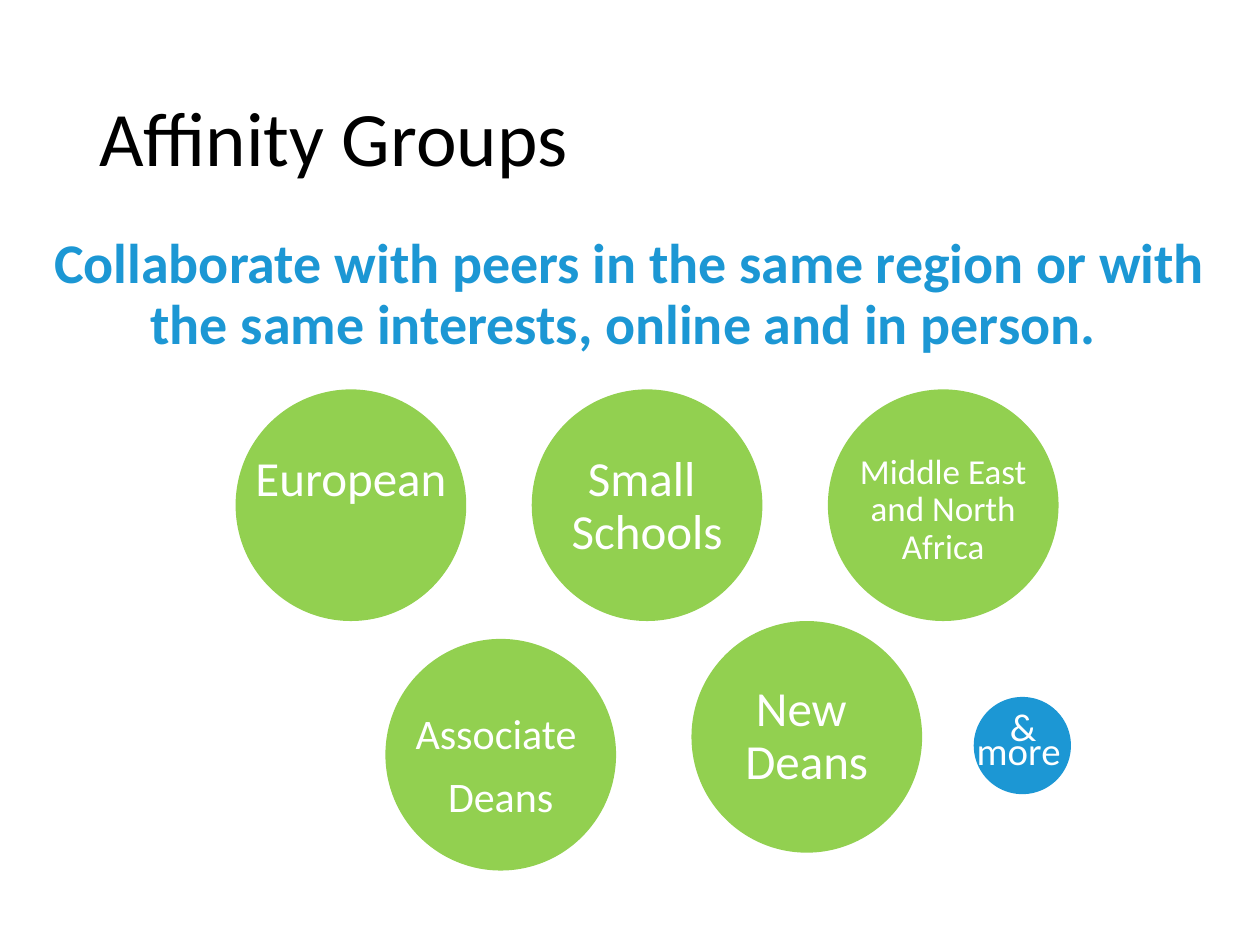
import pptx
import pptx.dml.color
import pptx.enum.shapes
import pptx.enum.text
import pptx.util

Cm = pptx.util.Cm
Pt = pptx.util.Pt
RGBColor = pptx.dml.color.RGBColor
Anchor = pptx.enum.text.MSO_ANCHOR
Align = pptx.enum.text.PP_ALIGN

BLACK = RGBColor(0x00, 0x00, 0x00)
WHITE = RGBColor(0xFF, 0xFF, 0xFF)
BLUE = RGBColor(0x1C, 0x97, 0xD4)
GREEN = RGBColor(0x92, 0xD0, 0x50)

GROUP_WIDTH, GROUP_HEIGHT = 4.65, 4.67
LABEL_HEIGHT = 4.06
ROW_LEFT, ROW_TOP, ROW_PITCH = 4.75, 7.85, 5.97


class SlideBuilder:
    font_name = "Calibri"

    def __init__(self, slide):
        self.slide = slide

    def add_text(self, left, top, width, height, paragraphs, size, color,
                 bold=False, align=Align.CENTER, anchor=Anchor.TOP,
                 line_spacing=0.9, margin=0.13):
        box = self.slide.shapes.add_textbox(Cm(left), Cm(top), Cm(width), Cm(height))
        text_frame = box.text_frame
        text_frame.word_wrap = True
        text_frame.vertical_anchor = anchor
        text_frame.margin_top = text_frame.margin_bottom = Cm(margin)
        text_frame.text = "\n".join(paragraphs)
        for index, paragraph in enumerate(text_frame.paragraphs):
            paragraph.alignment = align
            paragraph.line_spacing = line_spacing
            if index:
                paragraph.space_before = Pt(10)
            for run in paragraph.runs:
                run.font.name = self.font_name
                run.font.size = Pt(size)
                run.font.bold = bold
                run.font.color.rgb = color

    def add_circle(self, left, top, width, height, color):
        circle = self.slide.shapes.add_shape(
            pptx.enum.shapes.MSO_SHAPE.OVAL, Cm(left), Cm(top), Cm(width), Cm(height))
        circle.shadow.inherit = False
        circle.fill.solid()
        circle.fill.fore_color.rgb = color
        circle.line.fill.background()

    def add_group(self, left, top, paragraphs, size, label_width, label_offset):
        self.add_circle(left, top, GROUP_WIDTH, GROUP_HEIGHT, GREEN)
        label_left = left + (GROUP_WIDTH - label_width) / 2
        self.add_text(label_left, top + label_offset, label_width, LABEL_HEIGHT,
                      paragraphs, size, WHITE)


def main():
    presentation = pptx.Presentation()
    presentation.slide_width = Cm(25.4)
    presentation.slide_height = Cm(19.05)
    builder = SlideBuilder(presentation.slides.add_slide(presentation.slide_layouts[6]))

    builder.add_text(1.75, 1.02, 21.9, 3.68, ["Affinity Groups"], 44, BLACK,
                     align=Align.LEFT, anchor=Anchor.MIDDLE)
    builder.add_text(0.76, 4.62, 23.88, 2.84,
                     ["Collaborate with peers in the same region or with "
                      "the same interests, online and in person. "],
                     32, BLUE, bold=True)

    upper_row = [
        (["European"], 28, 4.83),
        (["Small \vSchools"], 28, 9.78),
        (["Middle East and North Africa"], 20, 4.65),
    ]
    for column, (paragraphs, size, label_width) in enumerate(upper_row):
        builder.add_group(ROW_LEFT + column * ROW_PITCH, ROW_TOP,
                          paragraphs, size, label_width, 1.17)
    builder.add_group(7.77, 12.88, ["Associate ", "Deans"], 24, 9.78, 1.37)
    builder.add_group(13.94, 12.52, ["New \vDeans"], 28, 9.78, 1.15)

    builder.add_circle(19.63, 14.05, 1.96, 1.96, BLUE)
    builder.add_text(19.38, 14.58, 2.49, 1.07, ["& more "], 22.2, WHITE,
                     line_spacing=0.5, margin=0)

    presentation.save("out.pptx")


if __name__ == "__main__":
    main()
